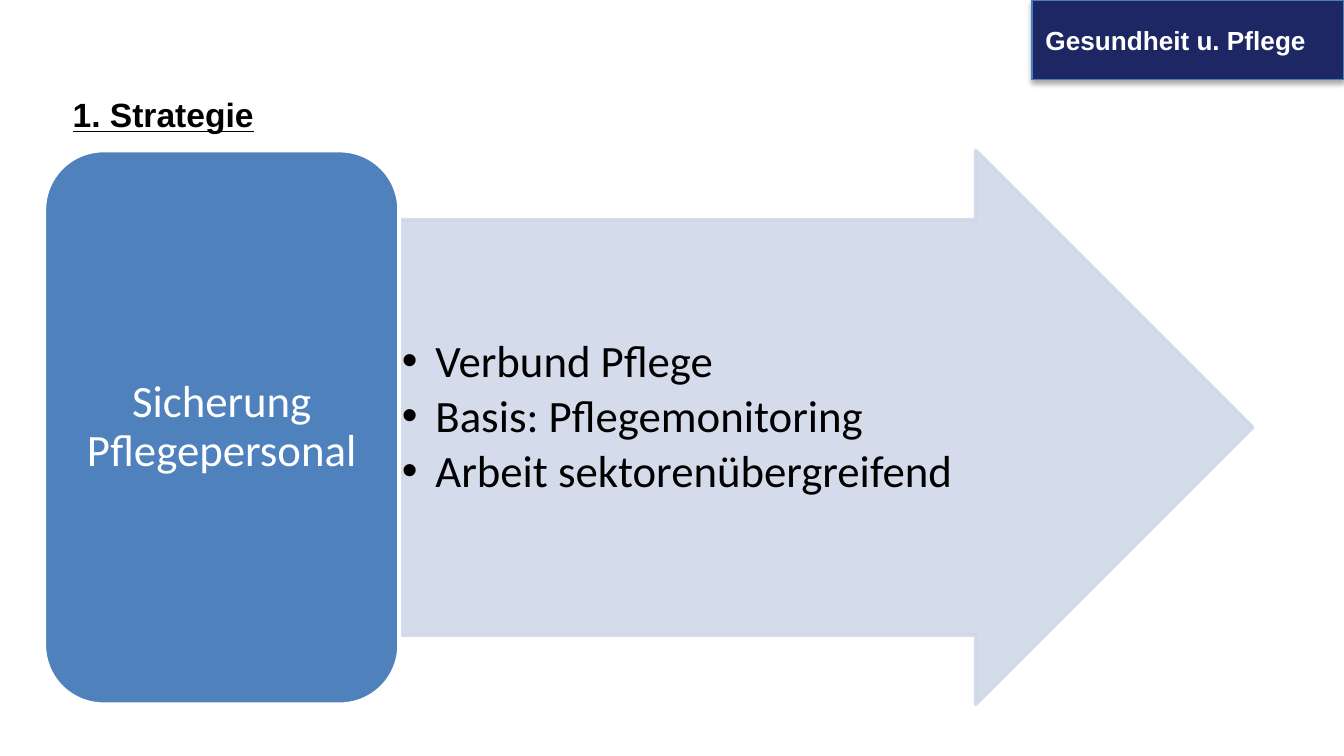
from lxml import etree
from pptx import Presentation
from pptx.dml.color import RGBColor
from pptx.enum.shapes import MSO_SHAPE as SHAPE
from pptx.enum.text import MSO_ANCHOR as ANCHOR, PP_ALIGN as ALIGN
from pptx.oxml import parse_xml
from pptx.oxml.ns import nsdecls, qn
from pptx.util import Inches, Pt

SECTION = "Gesundheit u. Pflege"
HEADING = "1. Strategie"
GOAL = "Sicherung Pflegepersonal"
MEASURES = ["Verbund Pflege", "Basis: Pflegemonitoring", "Arbeit sektorenübergreifend"]

NAVY, BLUE, EDGE, PALE = "1D2763", "4F81BD", "4B7EBC", "D0D8E8"
WHITE, BLACK = "FFFFFF", "000000"

SLIDE_WIDTH = 10
SLIDE_HEIGHT = SLIDE_WIDTH * 9 / 16
GOAL_LEFT, GOAL_WIDTH = 0.33, 2.64
FLOW_TOP, FLOW_HEIGHT = 1.12, 4.12
ARROW_LEFT, ARROW_WIDTH = GOAL_LEFT + GOAL_WIDTH, 6.35
BANNER_WIDTH = 2.32


def colour(value):
    return RGBColor.from_string(value)


def inches(*lengths):
    return [Inches(length) for length in lengths]


def add_block(slide, preset, box, fill, line, weight):
    block = slide.shapes.add_shape(preset, *inches(*box))
    block.shadow.inherit = False
    block.fill.solid()
    block.fill.fore_color.rgb = colour(fill)
    block.line.color.rgb = colour(line)
    block.line.width = Pt(weight)
    return block


def write(shape, lines, font, size, ink, align=ALIGN.LEFT, anchor=ANCHOR.MIDDLE, bold=False):
    frame = shape.text_frame
    frame.word_wrap = True
    frame.vertical_anchor = anchor
    frame.text = "\n".join(lines)
    for paragraph in frame.paragraphs:
        paragraph.alignment = align
        for run in paragraph.runs:
            run.font.name = font
            run.font.size = Pt(size)
            run.font.bold = bold
            run.font.color.rgb = colour(ink)
    return frame


def make_translucent(shape, percent):
    """Set the opacity of the shape's fill and line."""
    for rgb in shape.element.spPr.iter(qn("a:srgbClr")):
        etree.SubElement(rgb, qn("a:alpha")).set("val", str(percent * 1000))


def drop_shadow(shape):
    effects = shape.element.spPr.find(qn("a:effectLst"))
    effects.append(parse_xml(
        f'<a:outerShdw {nsdecls("a")} blurRad="{Pt(3.1)}" dist="{Pt(1.8)}" dir="5400000" '
        f'rotWithShape="0"><a:srgbClr val="{BLACK}"><a:alpha val="35000"/></a:srgbClr></a:outerShdw>'))


def add_bullet(paragraph, indent):
    props = paragraph._p.get_or_add_pPr()
    props.set("marL", str(Inches(indent)))
    props.set("indent", str(-Inches(indent)))
    etree.SubElement(props, qn("a:buFont")).set("typeface", "Arial")
    etree.SubElement(props, qn("a:buChar")).set("char", "•")


def main():
    prs = Presentation()
    prs.slide_width, prs.slide_height = inches(SLIDE_WIDTH, SLIDE_HEIGHT)
    slide = prs.slides.add_slide(prs.slide_layouts[5])

    banner = add_block(slide, SHAPE.RECTANGLE, (SLIDE_WIDTH - BANNER_WIDTH, 0, BANNER_WIDTH, 0.59),
                       NAVY, EDGE, 0.75)
    drop_shadow(banner)
    write(banner, [SECTION], "Arial", 14, WHITE, bold=True)

    title = slide.shapes.title
    title.left, title.top, title.width, title.height = inches(0.44, 0.65, 7.06, 0.4)
    heading = write(title, [HEADING], "Arial", 18, BLACK, bold=True)
    heading.paragraphs[0].runs[0].font.underline = True

    arrow = add_block(slide, SHAPE.RIGHT_ARROW, (ARROW_LEFT, FLOW_TOP, ARROW_WIDTH, FLOW_HEIGHT),
                      PALE, PALE, 2)
    arrow.adjustments[0], arrow.adjustments[1] = 0.75, 0.5
    make_translucent(arrow, 90)

    measures = slide.shapes.add_textbox(*inches(ARROW_LEFT, 2.5, 4.8, 1.3))
    frame = write(measures, MEASURES, "Calibri", 24, BLACK, anchor=ANCHOR.TOP)
    frame.margin_left = frame.margin_right = frame.margin_top = frame.margin_bottom = Inches(0.02)
    for paragraph in frame.paragraphs:
        add_bullet(paragraph, 0.25)
        paragraph.line_spacing = 0.9
        paragraph.space_after = Pt(3.6)

    goal = add_block(slide, SHAPE.ROUNDED_RECTANGLE, (GOAL_LEFT, FLOW_TOP, GOAL_WIDTH, FLOW_HEIGHT),
                     BLUE, WHITE, 2)
    label = write(goal, [GOAL], "Calibri", 24, WHITE, ALIGN.CENTER)
    label.paragraphs[0].line_spacing = 0.9

    prs.save("out.pptx")


if __name__ == "__main__":
    main()
